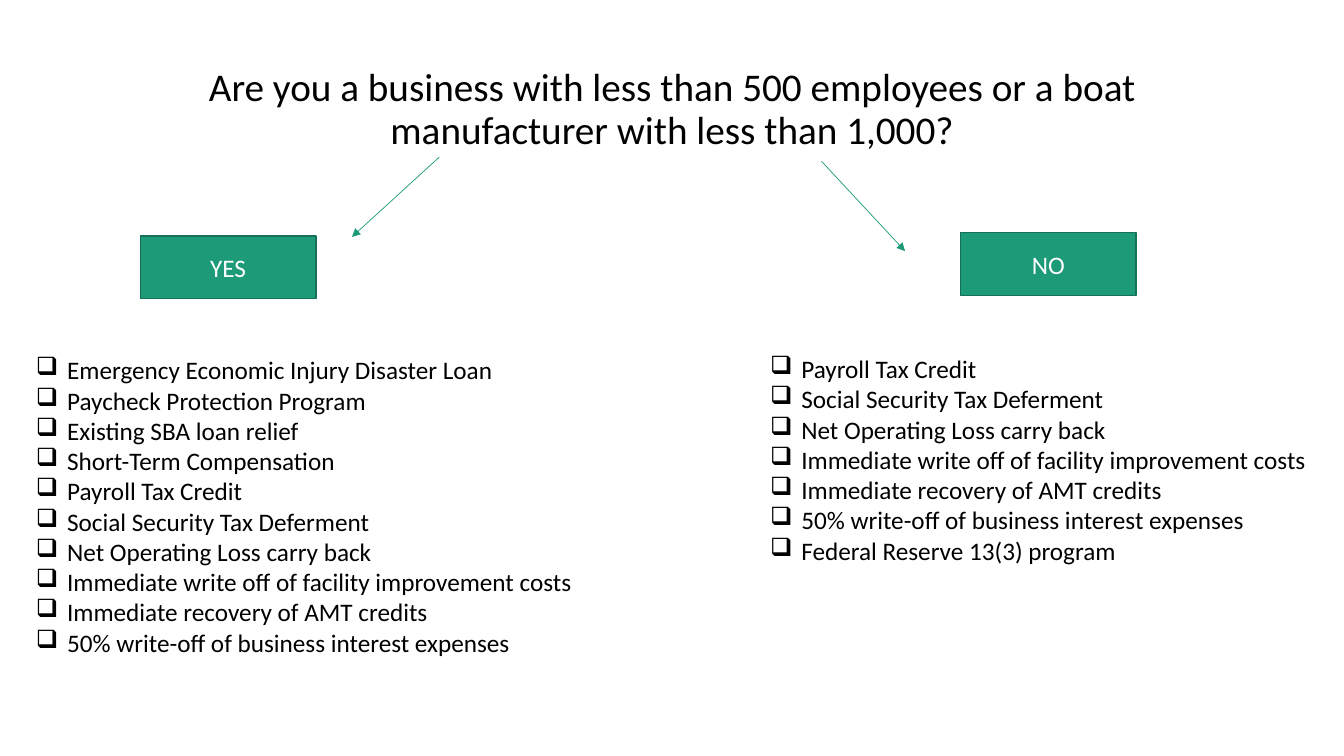
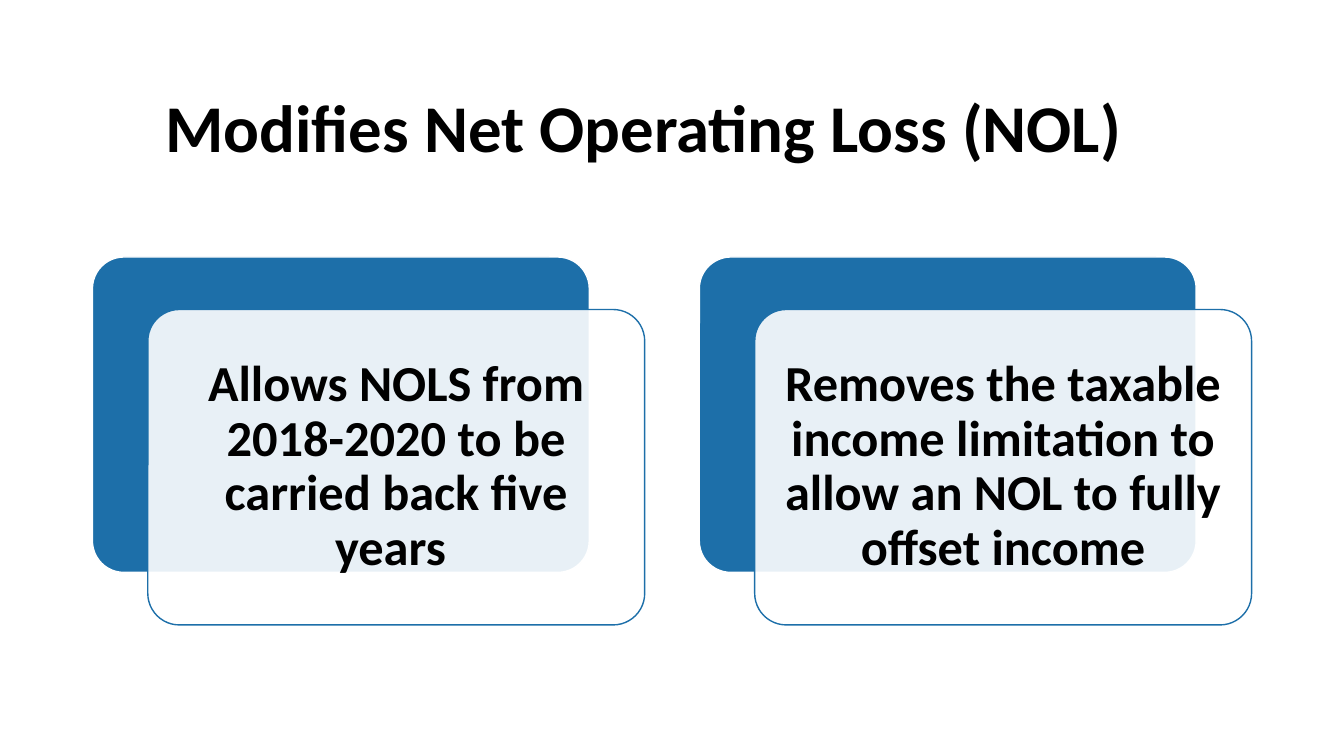
import pptx
import pptx.util
import pptx.dml.color
import pptx.enum.shapes
import pptx.enum.text
import pptx.oxml
import pptx.oxml.ns
import lxml.etree

RGBColor = pptx.dml.color.RGBColor
SHAPE = pptx.enum.shapes.MSO_SHAPE
ALIGN = pptx.enum.text.PP_ALIGN
ANCHOR = pptx.enum.text.MSO_ANCHOR

BLACK = RGBColor(0x00, 0x00, 0x00)
WHITE = RGBColor(0xFF, 0xFF, 0xFF)
GREEN = RGBColor(0x1D, 0x9A, 0x78)
DARK_GREEN = RGBColor(0x15, 0x72, 0x59)
BLUE = RGBColor(0x1D, 0x6F, 0xA9)

FONT = "Calibri"
COLUMNS, ROWS = 32, 18


def add_xml(parent, tag, **attributes):
    return lxml.etree.SubElement(parent, pptx.oxml.ns.qn(tag), **attributes)


class Deck:
    def __init__(self):
        self.presentation = pptx.Presentation()
        self.presentation.slide_width = pptx.util.Inches(13.33)
        self.presentation.slide_height = pptx.util.Inches(7.5)
        self.slide = None

    def new_slide(self):
        self.slide = self.presentation.slides.add_slide(self.presentation.slide_layouts[6])

    def x(self, columns):
        return round(self.presentation.slide_width * columns / COLUMNS)

    def y(self, rows):
        return round(self.presentation.slide_height * rows / ROWS)

    def area(self, left, top, width, height):
        return self.x(left), self.y(top), self.x(width), self.y(height)

    def style(self, paragraph, size, color=BLACK, bold=False, align=ALIGN.LEFT, spacing=None):
        paragraph.alignment = align
        paragraph.line_spacing = spacing
        for run in paragraph.runs:
            run.font.name = FONT
            run.font.size = pptx.util.Pt(size)
            run.font.bold = bold
            run.font.color.rgb = color

    def text_frame(self, area):
        frame = self.slide.shapes.add_textbox(*self.area(*area)).text_frame
        frame.word_wrap = True
        return frame

    def heading(self, text, area, size, anchor=ANCHOR.TOP, **look):
        frame = self.text_frame(area)
        frame.vertical_anchor = anchor
        frame.text = text
        self.style(frame.paragraphs[0], size, spacing=0.9, **look)

    def checklist(self, items, area):
        frame = self.text_frame(area)
        frame.text = "\n".join(items)
        indent = pptx.util.Inches(0.31)
        for paragraph in frame.paragraphs:
            properties = paragraph._p.get_or_add_pPr()
            properties.set("marL", str(indent))
            properties.set("indent", str(-indent))
            add_xml(properties, "a:buChar", char="❑")
            self.style(paragraph, 18)

    def block(self, kind, area, fill, line):
        shape = self.slide.shapes.add_shape(kind, *self.area(*area))
        shape.shadow.inherit = False
        shape.fill.solid()
        shape.fill.fore_color.rgb = fill
        shape.line.color.rgb = line
        shape.line.width = pptx.util.Pt(1)
        return shape

    def label(self, shape, text, size, **look):
        frame = shape.text_frame
        frame.word_wrap = True
        frame.vertical_anchor = ANCHOR.MIDDLE
        frame.text = text
        self.style(frame.paragraphs[0], size, align=ALIGN.CENTER, **look)

    def answer(self, text, left, top):
        button = self.block(SHAPE.FLOWCHART_PROCESS, (left, top, 4.18, 1.49), GREEN, DARK_GREEN)
        self.label(button, text, 18, color=WHITE)

    def arrow(self, start, end):
        connector = self.slide.shapes.add_connector(
            pptx.enum.shapes.MSO_CONNECTOR.STRAIGHT,
            self.x(start[0]), self.y(start[1]), self.x(end[0]), self.y(end[1]))
        connector.line.color.rgb = GREEN
        connector.line.width = pptx.util.Pt(0.5)
        add_xml(connector.line._get_or_add_ln(), "a:tailEnd", type="triangle")
        add_xml(connector._element.spPr, "a:effectLst")

    def layered_card(self, text, left, top):
        width, height = 11.83, 7.51
        back = self.block(SHAPE.ROUNDED_RECTANGLE, (left, top, width, height), BLUE, WHITE)
        front = self.block(SHAPE.ROUNDED_RECTANGLE,
                           (left + 1.32, top + 1.25, width, height), WHITE, BLUE)
        for layer in (back, front):
            layer.adjustments[0] = 0.1
        fill_color = front._element.spPr.find(".//" + pptx.oxml.ns.qn("a:srgbClr"))
        add_xml(fill_color, "a:alpha", val="90000")
        frame = front.text_frame
        frame.margin_left = frame.margin_right = pptx.util.Inches(0.15)
        frame.margin_top = frame.margin_bottom = pptx.util.Inches(0.15)
        self.label(front, text, 36, bold=True, spacing=0.9)


def eligibility(deck):
    small_business_only = [
        "Emergency Economic Injury Disaster Loan",
        "Paycheck Protection Program",
        "Existing SBA loan relief",
        "Short-Term Compensation",
    ]
    any_business = [
        "Payroll Tax Credit",
        "Social Security Tax Deferment",
        "Net Operating Loss carry back",
        "Immediate write off of facility improvement costs",
        "Immediate recovery of AMT credits",
        "50% write-off of business interest expenses",
    ]
    deck.new_slide()
    deck.heading("Are you a business with less than 500 employees or a boat "
                 "manufacturer with less than 1,000?",
                 (2.2, 1.5, 27.6, 2.2), 28, align=ALIGN.CENTER)
    deck.checklist(small_business_only + any_business, (0.62, 8.33, 13.75, 8.23))
    deck.checklist(any_business + ["Federal Reserve 13(3) program"], (18.1, 8.3, 13.75, 5.33))
    deck.answer("NO", 22.87, 5.54)
    deck.answer("YES", 3.34, 5.62)
    deck.arrow((10.46, 3.74), (8.38, 5.64))
    deck.arrow((19.56, 3.84), (21.55, 5.98))


def net_operating_loss(deck):
    changes = [
        "Allows NOLS from 2018-2020 to be carried back five years ",
        "Removes the taxable income limitation to allow an NOL to fully offset income",
    ]
    deck.new_slide()
    deck.heading("Modifies Net Operating Loss (NOL)", (3.7, 1.38, 26.4, 3.48), 47.7,
                 anchor=ANCHOR.MIDDLE, bold=True)
    for position, change in enumerate(changes):
        deck.layered_card(change, 2.2 + 14.45 * position, 6.12)


def main():
    deck = Deck()
    eligibility(deck)
    net_operating_loss(deck)
    deck.presentation.save("out.pptx")


if __name__ == "__main__":
    main()
